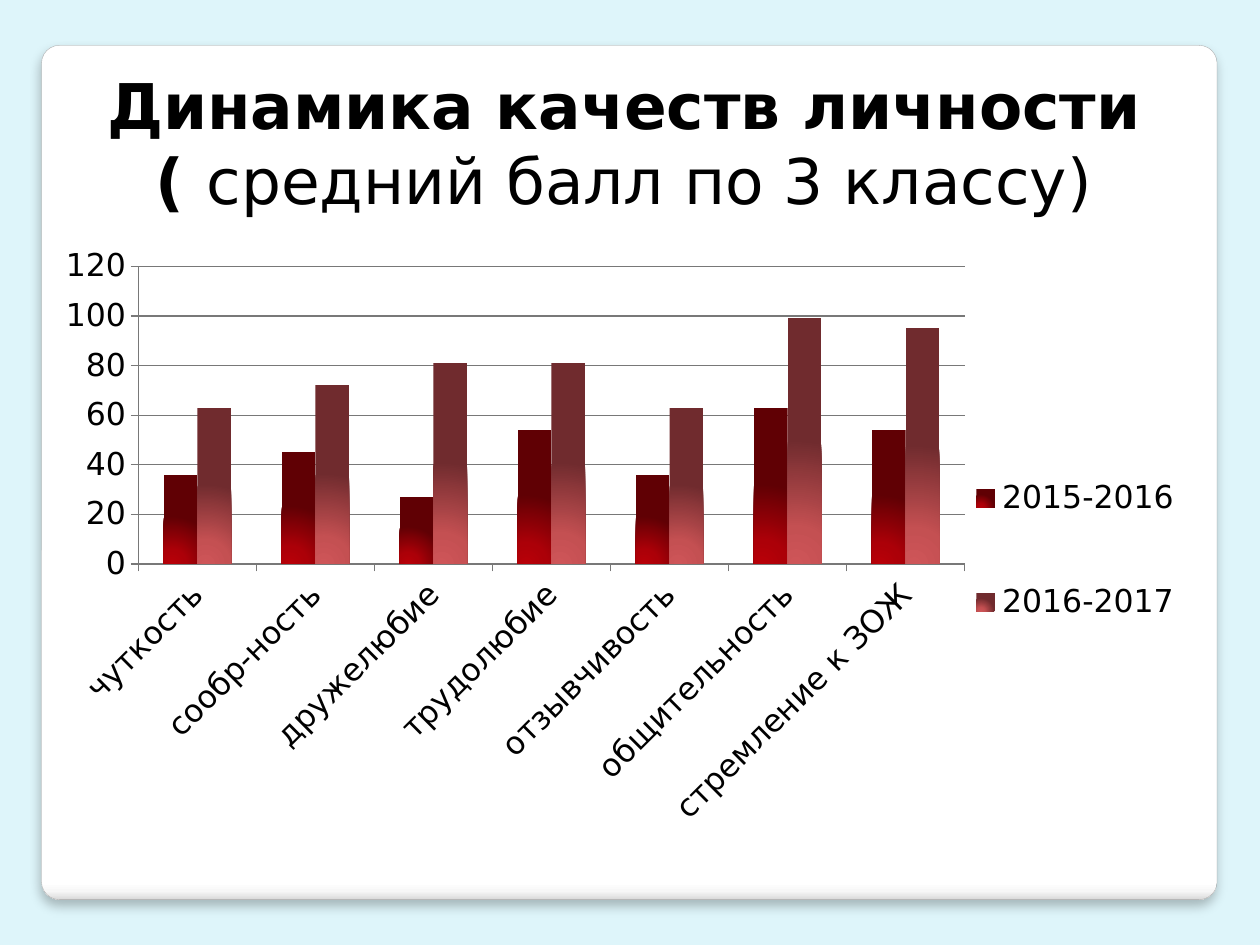
from lxml import etree
from pptx import Presentation
from pptx.chart.data import CategoryChartData
from pptx.dml.color import RGBColor
from pptx.enum.chart import XL_CHART_TYPE, XL_LEGEND_POSITION, XL_TICK_MARK
from pptx.enum.shapes import MSO_SHAPE
from pptx.enum.text import MSO_ANCHOR, PP_ALIGN
from pptx.oxml import parse_xml
from pptx.oxml.ns import nsdecls, qn
from pptx.util import Inches, Pt

CLUSTERED = XL_CHART_TYPE.COLUMN_CLUSTERED
LEGEND_RIGHT = XL_LEGEND_POSITION.RIGHT
TICK_OUTSIDE, TICK_NONE = XL_TICK_MARK.OUTSIDE, XL_TICK_MARK.NONE
ROUNDED = MSO_SHAPE.ROUNDED_RECTANGLE
MIDDLE, CENTER = MSO_ANCHOR.MIDDLE, PP_ALIGN.CENTER

THEME = {
    "font": "DejaVu Sans",
    "title_size": 36,
    "chart_size": 18,
    "background": "DEF5FA",
    "text": "000000",
    "grid": "787878",
    "panel_line": "A4A4A4",
    "panel_stops": [(0, "FFFFFF"), (98, "FFFFFF"), (99, "F7F7F7"), (100, "DADADA")],
    "series_stops": [
        [(0, "B80008"), (30, "AC0008"), (100, "600004")],
        [(0, "CE5558"), (30, "C45052"), (100, "702B2E")],
    ],
}
DOWNWARD = '<a:lin ang="5400000" scaled="0"/>'
FROM_BASE = ('<a:path path="circle">'
             '<a:fillToRect l="25000" t="100000" r="75000" b="0"/></a:path>')

# Content
TITLE_LINES = [
    [("Динамика качеств личности", True)],
    [("( ", True), ("средний балл по 3 классу)", False)],
]
CATEGORIES = ["чуткость", "сообр-ность", "дружелюбие", "трудолюбие",
              "отзывчивость", "общительность", "стремление к ЗОЖ"]
SERIES = {
    "2015-2016": [36, 45, 27, 54, 36, 63, 54],
    "2016-2017": [63, 72, 81, 81, 63, 99, 95],
}


def apply_format(target, values):
    for name, value in values.items():
        setattr(target, name, value)


def set_gradient(fill, properties, stops, direction):
    """Swap a solid fill for a gradient with the given stops."""
    fill.solid()
    stop_xml = "".join(
        f'<a:gs pos="{position * 1000}"><a:srgbClr val="{color}"/></a:gs>'
        for position, color in stops)
    gradient = parse_xml(f'<a:gradFill {nsdecls("a")} rotWithShape="1">'
                         f'<a:gsLst>{stop_xml}</a:gsLst>{direction}</a:gradFill>')
    properties.replace(properties.find(qn("a:solidFill")), gradient)


def manual_layout(left, top, width, height, inner=False):
    layout = etree.Element(qn("c:layout"))
    manual = etree.SubElement(layout, qn("c:manualLayout"))
    values = {"layoutTarget": "inner"} if inner else {}
    values.update(xMode="edge", yMode="edge", x=left, y=top, w=width, h=height)
    for tag, value in values.items():
        etree.SubElement(manual, qn(f"c:{tag}")).set("val", str(value))
    return layout


class SlideBuilder:
    def __init__(self, slide, theme):
        self.slide = slide
        self.theme = theme

    def color(self, name):
        return RGBColor.from_string(self.theme[name])

    def font_format(self, size_name):
        return {"name": self.theme["font"], "size": Pt(self.theme[size_name])}

    def background(self):
        fill = self.slide.background.fill
        fill.solid()
        fill.fore_color.rgb = self.color("background")

    def panel(self, left, top, width, height):
        shape = self.slide.shapes.add_shape(
            ROUNDED, *map(Inches, (left, top, width, height)))
        shape.adjustments[0] = 0.021
        shape.shadow.inherit = False
        properties = shape.element.spPr
        set_gradient(shape.fill, properties, self.theme["panel_stops"], DOWNWARD)
        shape.line.color.rgb = self.color("panel_line")
        shape.line.width = Pt(0.16)
        properties.find(qn("a:effectLst")).append(parse_xml(
            f'<a:outerShdw {nsdecls("a")} blurRad="{Pt(6)}" dist="{Pt(4)}" '
            'dir="5400000" algn="tl" rotWithShape="0"><a:srgbClr val="000000">'
            '<a:alpha val="25000"/></a:srgbClr></a:outerShdw>'))

    def title(self, lines, left, top, width, height):
        box = self.slide.shapes.add_textbox(*map(Inches, (left, top, width, height)))
        frame = box.text_frame
        apply_format(frame, {"word_wrap": False, "vertical_anchor": MIDDLE})
        for index, line in enumerate(lines):
            paragraph = frame.add_paragraph() if index else frame.paragraphs[0]
            paragraph.alignment = CENTER
            paragraph_properties = paragraph._p.get_or_add_pPr()
            paragraph_properties.set("marL", "0")
            paragraph_properties.set("indent", str(Inches(0.49)))
            for text, bold in line:
                run = paragraph.add_run()
                run.text = text
                apply_format(run.font, {**self.font_format("title_size"), "bold": bold})
                run.font.color.rgb = self.color("text")

    def column_chart(self, categories, series_values, left, top, width, height):
        data = CategoryChartData()
        data.categories = categories
        for name, values in series_values.items():
            data.add_series(name, values)
        chart = self.slide.shapes.add_chart(
            CLUSTERED, *map(Inches, (left, top, width, height)), data).chart
        apply_format(chart, {"has_title": False, "has_legend": True})
        apply_format(chart.font, self.font_format("chart_size"))
        chart.font.color.rgb = self.color("text")

        # Columns
        plot = chart.plots[0]
        apply_format(plot, {"gap_width": 150, "overlap": 0, "vary_by_categories": False})
        for series, stops in zip(plot.series, self.theme["series_stops"]):
            series.invert_if_negative = False
            fill = series.format.fill
            fill.solid()
            set_gradient(fill, series._element.spPr, stops, FROM_BASE)

        # Axes
        value_axis, category_axis = chart.value_axis, chart.category_axis
        apply_format(value_axis, {"minimum_scale": 0, "maximum_scale": 120,
                                  "major_unit": 20, "has_major_gridlines": True})
        lines = [value_axis.major_gridlines.format.line]
        for axis in (value_axis, category_axis):
            apply_format(axis, {"major_tick_mark": TICK_OUTSIDE,
                                "minor_tick_mark": TICK_NONE})
            lines.append(axis.format.line)
        for line in lines:
            line.color.rgb = self.color("grid")
            line.width = Pt(0.75)
        labels_font = category_axis.tick_labels.font
        apply_format(labels_font, self.font_format("chart_size"))
        labels_font.color.rgb = self.color("text")
        label_body = category_axis._element.find(qn("c:txPr")).find(qn("a:bodyPr"))
        label_body.set("rot", "-2700000")
        label_body.set("vert", "horz")

        # Plot area and legend places
        plot_area = chart._chartSpace.chart.plotArea
        for layout in plot_area.findall(qn("c:layout")):
            plot_area.remove(layout)
        plot_area.insert(0, manual_layout(0.093, 0.076, 0.703, 0.455, inner=True))
        legend = chart.legend
        apply_format(legend, {"position": LEGEND_RIGHT, "include_in_layout": False})
        for layout in legend._element.findall(qn("c:layout")):
            legend._element.remove(layout)
        legend._element.find(qn("c:legendPos")).addnext(
            manual_layout(0.8, 0.3, 0.18, 0.42))


def main():
    presentation = Presentation()
    presentation.slide_width = Inches(10)
    presentation.slide_height = Inches(7.5)
    slide = presentation.slides.add_slide(presentation.slide_layouts[6])
    builder = SlideBuilder(slide, THEME)
    builder.background()
    builder.panel(0.33, 0.36, 9.33, 6.78)
    builder.title(TITLE_LINES, 0.23, 0.47, 8.96, 1.31)
    builder.column_chart(CATEGORIES, SERIES, 0.23, 1.72, 9.33, 5.19)
    presentation.save("out.pptx")


if __name__ == "__main__":
    main()
